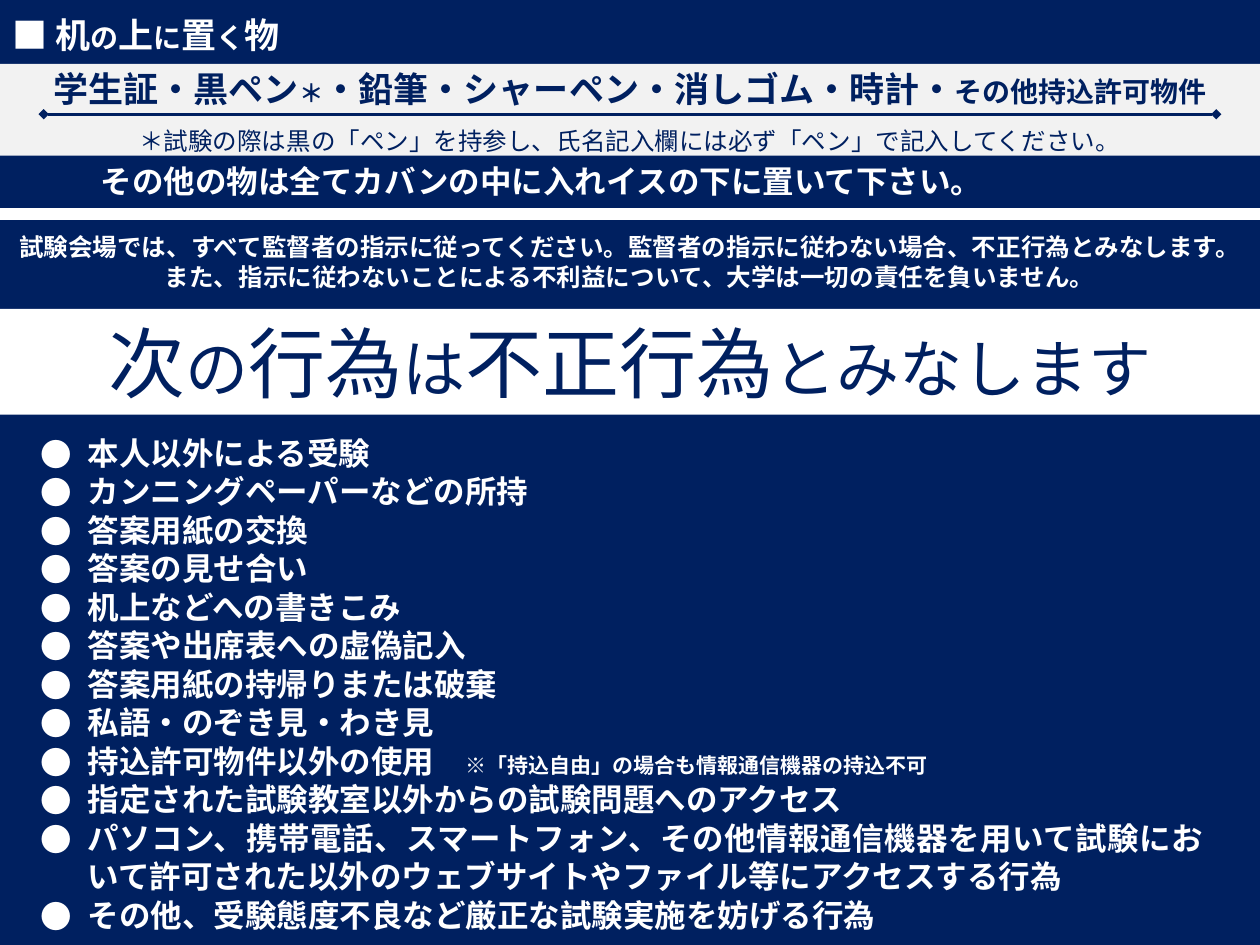
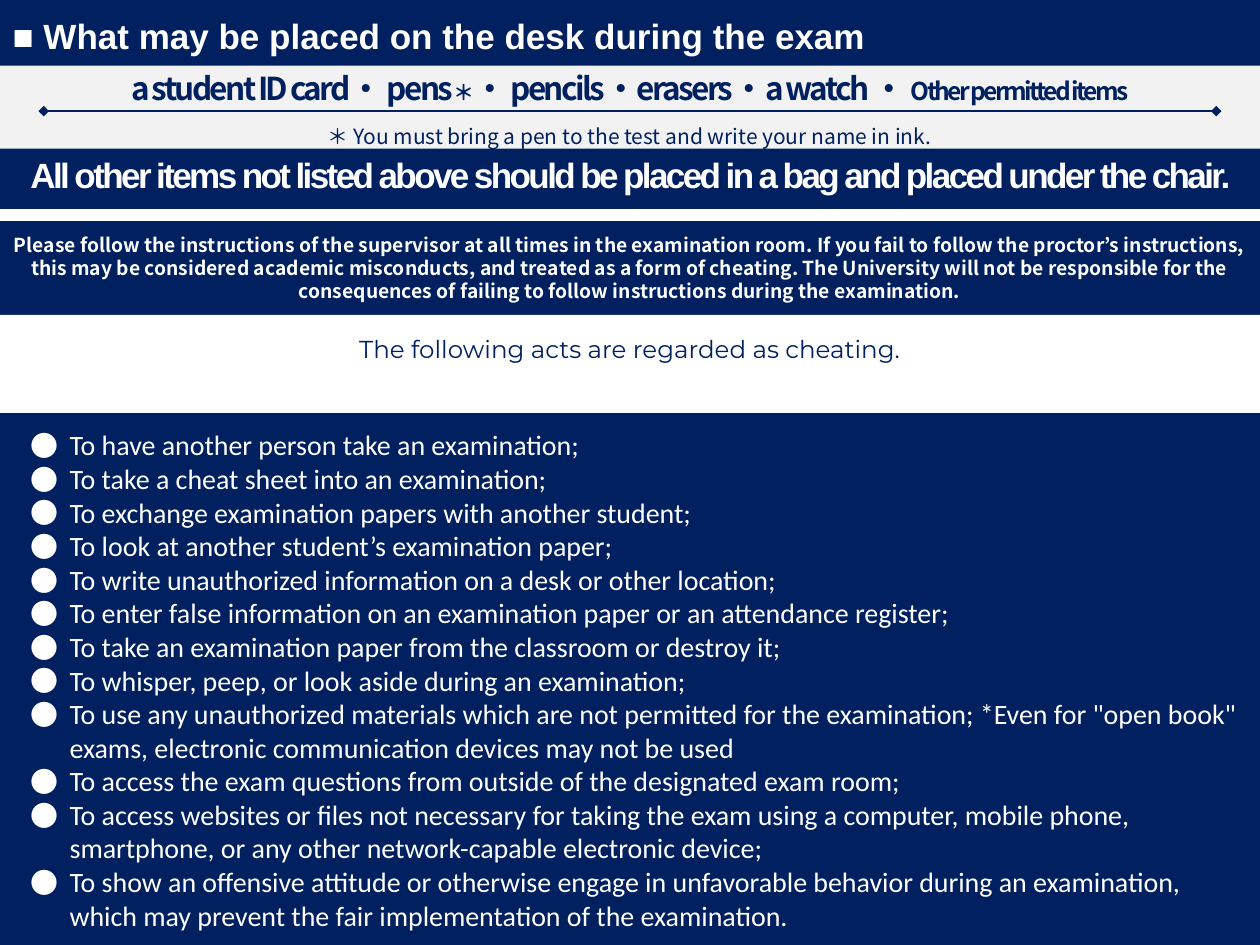
from itertools import cycle
from lxml.etree import SubElement
from pptx import Presentation
from pptx.dml.color import RGBColor
from pptx.enum.shapes import MSO_CONNECTOR, MSO_SHAPE
from pptx.enum.text import MSO_ANCHOR, MSO_AUTO_SIZE, PP_ALIGN
from pptx.oxml.ns import qn
from pptx.util import Pt

NAVY, WHITE, GREY = "002060", "FFFFFF", "F2F2F2"
JAPANESE, ARIAL, CALIBRI, MONTSERRAT = "Noto Sans CJK JP", "Arial", "Calibri", "Montserrat"
WIDTH, HEIGHT = 720, 540
LEFT, CENTER, JUSTIFY = PP_ALIGN.LEFT, PP_ALIGN.CENTER, PP_ALIGN.JUSTIFY
TOP, MIDDLE = MSO_ANCHOR.TOP, MSO_ANCHOR.MIDDLE


def color(code):
    """Turn a hex string into a colour."""
    return RGBColor.from_string(code)


def sized(text, *sizes):
    """Split text at bars into runs that take the sizes in turn."""
    return list(zip(text.split("|"), cycle(sizes)))


def prepare_frame(shape, anchor=TOP):
    """Set up the wrapping text frame of a shape and return it."""
    frame = shape.text_frame
    frame.word_wrap = True
    frame.auto_size = MSO_AUTO_SIZE.NONE
    frame.vertical_anchor = anchor
    frame.margin_left = frame.margin_right = Pt(7.2)
    frame.margin_top = frame.margin_bottom = Pt(3.6)
    return frame


def write(frame, runs, font=JAPANESE, fill=WHITE, bold=False, align=CENTER,
          line=None, tracking=0, bullet=None):
    """Write one paragraph of (text, size) runs, with line spacing and bullet indents."""
    paragraph = frame.paragraphs[0]
    if paragraph.runs:
        paragraph = frame.add_paragraph()
    paragraph.alignment = align
    paragraph.space_before = paragraph.space_after = Pt(0)
    if line:
        paragraph.line_spacing = line
    if bullet:
        margin, hanging = bullet
        properties = paragraph._p.get_or_add_pPr()
        properties.set("marL", str(Pt(margin)))
        properties.set("indent", str(-Pt(hanging)))
        SubElement(properties, qn("a:buFont"), typeface=JAPANESE)
        SubElement(properties, qn("a:buChar"), char="●")
    for text, size in runs:
        run = paragraph.add_run()
        run.text = text
        run.font.size, run.font.bold, run.font.name = Pt(size), bold, font
        run.font.color.rgb = color(fill)
        properties = run._r.get_or_add_rPr()
        SubElement(properties, qn("a:ea"), typeface=font)
        if tracking:
            properties.set("spc", str(int(tracking * 100)))


def add_text(slide, box, anchor=TOP):
    """Add a text box and return its frame."""
    return prepare_frame(slide.shapes.add_textbox(*map(Pt, box)), anchor)


def add_band(slide, box, fill, anchor=TOP):
    """Add a plain filled rectangle and return its frame."""
    shape = slide.shapes.add_shape(MSO_SHAPE.RECTANGLE, *map(Pt, box))
    shape.shadow.inherit = False
    shape.fill.solid()
    shape.fill.fore_color.rgb = color(fill)
    shape.line.fill.background()
    return prepare_frame(shape, anchor)


def add_rule(slide, left, right, top, fill, weight, ends=None):
    """Draw a horizontal rule, with a mark at both ends if one is named."""
    rule = slide.shapes.add_connector(
        MSO_CONNECTOR.STRAIGHT, Pt(left), Pt(top), Pt(right), Pt(top))
    rule.line.color.rgb = color(fill)
    rule.line.width = Pt(weight)
    if ends:
        for tag in ("a:headEnd", "a:tailEnd"):
            SubElement(rule.line._get_or_add_ln(), qn(tag), type=ends)
    SubElement(rule._element.spPr, qn("a:effectLst"))


def start_slide(presentation, runs, height, font):
    """Add a navy slide with its heading in the title placeholder."""
    slide = presentation.slides.add_slide(presentation.slide_layouts[5])
    slide.background.fill.solid()
    slide.background.fill.fore_color.rgb = color(NAVY)
    title = slide.shapes.title
    title.left, title.top, title.width, title.height = map(Pt, (0, 0, WIDTH, height))
    write(prepare_frame(title, MIDDLE), runs, font, bold=True, align=LEFT, line=1.25)
    return slide


def add_desk_items(slide, box, items, note, rule_offset, leading, tracking=0):
    """Add the grey band of permitted items, its rule and the note on pens."""
    left, top, width, _ = box
    frame = add_band(slide, box, GREY, MIDDLE)
    write(frame, items, fill=NAVY, bold=True, tracking=tracking, line=Pt(leading[0]))
    write(frame, note, fill=NAVY, line=Pt(leading[1]))
    add_rule(slide, left + 25, left + width - 25, top + rule_offset, NAVY, 1.5, "diamond")


def add_notice(slide, box, paragraphs, size, leading):
    """Add the bold notice about following instructions and the white rule above it."""
    left, top, width, _ = box
    add_rule(slide, left, left + width, top - 6.5, WHITE, 6.75)
    frame = add_text(slide, box)
    for text in paragraphs:
        write(frame, [(text, size)], bold=True, line=Pt(leading))


def add_acts(slide, box, acts, size, **style):
    """Add the bulleted list of forbidden acts."""
    frame = add_text(slide, box)
    for act in acts:
        write(frame, act if isinstance(act, list) else [(act, size)], **style)


def build_japanese(presentation):
    """Build the Japanese slide."""
    slide = start_slide(presentation, sized("■ 机|の|上|に|置|く|物", 20, 16), 33, JAPANESE)
    add_desk_items(
        slide, (0, 36.5, WIDTH, 52.5),
        sized("学生証・黒ペン|＊", 20, 14)
        + sized("・鉛筆・シャーペン・消しゴム・時計・|その他持込許可物件", 20, 16),
        [("＊試験の際は黒の「ペン」を持参し、氏名記入欄には必ず「ペン」で記入してください。", 14)],
        28.8, (26, 26))
    write(add_text(slide, (0, 89, 619, 29), MIDDLE),
          [("その他の物は全てカバンの中に入れイスの下に置いて下さい。", 18)], bold=True)
    add_notice(slide, (0, 129, WIDTH, 41), (
        "試験会場では、すべて監督者の指示に従ってください。監督者の指示に従わない場合、不正行為とみなします。",
        "また、指示に従わないことによる不利益について、大学は一切の責任を負いません。"), 14, 17)
    write(add_band(slide, (0, 176.5, WIDTH, 60.5), WHITE, MIDDLE),
          sized("次|の|行為|は|不正行為|とみなします", 44, 36), fill=NAVY)
    add_acts(slide, (16, 244, 679, 293), (
        "本人以外による受験",
        "カンニングペーパーなどの所持",
        "答案用紙の交換",
        "答案の見せ合い",
        "机上などへの書きこみ",
        "答案や出席表への虚偽記入",
        "答案用紙の持帰りまたは破棄",
        "私語・のぞき見・わき見",
        sized("持込許可物件以外の使用　|※「持込自由」の場合も情報通信機器の持込不可", 18, 12),
        "指定された試験教室以外からの試験問題へのアクセス",
        "パソコン、携帯電話、スマートフォン、その他情報通信機器を用いて試験において許可された以外の"
        "ウェブサイトやファイル等にアクセスする行為",
        "その他、受験態度不良など厳正な試験実施を妨げる行為",
    ), 18, bold=True, align=JUSTIFY, line=Pt(22), bullet=(27, 27))


def build_english(presentation):
    """Build the English slide."""
    slide = start_slide(
        presentation, [("■ What may be placed on the desk during the exam", 20)], 34.5, ARIAL)
    add_desk_items(
        slide, (0, 37.5, WIDTH, 47.5),
        sized("a student ID card・ pens|＊|・ pencils・erasers・a watch ・", 18, 12)
        + [(" Other permitted items", 14)],
        [("＊ You must bring a pen to the test and write your name in ink.", 12)],
        26, (24, 24), -1.5)
    write(add_text(slide, (4, 83.5, 712, 32), MIDDLE),
          [("All other items not listed above should be placed in a bag"
            " and placed under the chair.", 20)], ARIAL, bold=True, tracking=-1.5)
    add_notice(slide, (0, 129.5, WIDTH, 47.5), (
        "Please follow the instructions of the supervisor at all times in the examination room. "
        "If you fail to follow the proctor’s instructions, this may be considered academic "
        "misconducts, and treated as a form of cheating. The University will not be responsible "
        "for the consequences of failing to follow instructions during the examination.",), 11, 13.2)
    add_band(slide, (0, 180, WIDTH, 56), WHITE)
    write(add_band(slide, (22, 187.5, 676, 44.5), WHITE),
          [("The following acts are regarded as cheating.", 14)], MONTSERRAT, NAVY)
    add_acts(slide, (-4, 241, WIDTH, 298), (
        "To have another person take an examination;",
        "To take a cheat sheet into an examination;",
        "To exchange examination papers with another student;",
        "To look at another student’s examination paper;",
        "To write unauthorized information on a desk or other location;",
        "To enter false information on an examination paper or an attendance register;",
        "To take an examination paper from the classroom or destroy it;",
        "To whisper, peep, or look aside during an examination;",
        "To use any unauthorized materials which are not permitted for the examination; "
        "*Even for \"open book\" exams, electronic communication devices may not be used",
        "To access the exam questions from outside of the designated exam room;",
        "To access websites or files not necessary for taking the exam using a computer, "
        "mobile phone, smartphone, or any other network-capable electronic device;",
        "To show an offensive attitude or otherwise engage in unfavorable behavior during an "
        "examination, which may prevent the fair implementation of the examination.",
    ), 16, font=CALIBRI, align=LEFT, bullet=(36.7, 22.3))


def main():
    """Build both slides and save the presentation."""
    presentation = Presentation()
    presentation.slide_width, presentation.slide_height = Pt(WIDTH), Pt(HEIGHT)
    build_japanese(presentation)
    build_english(presentation)
    presentation.save("out.pptx")


if __name__ == "__main__":
    main()
